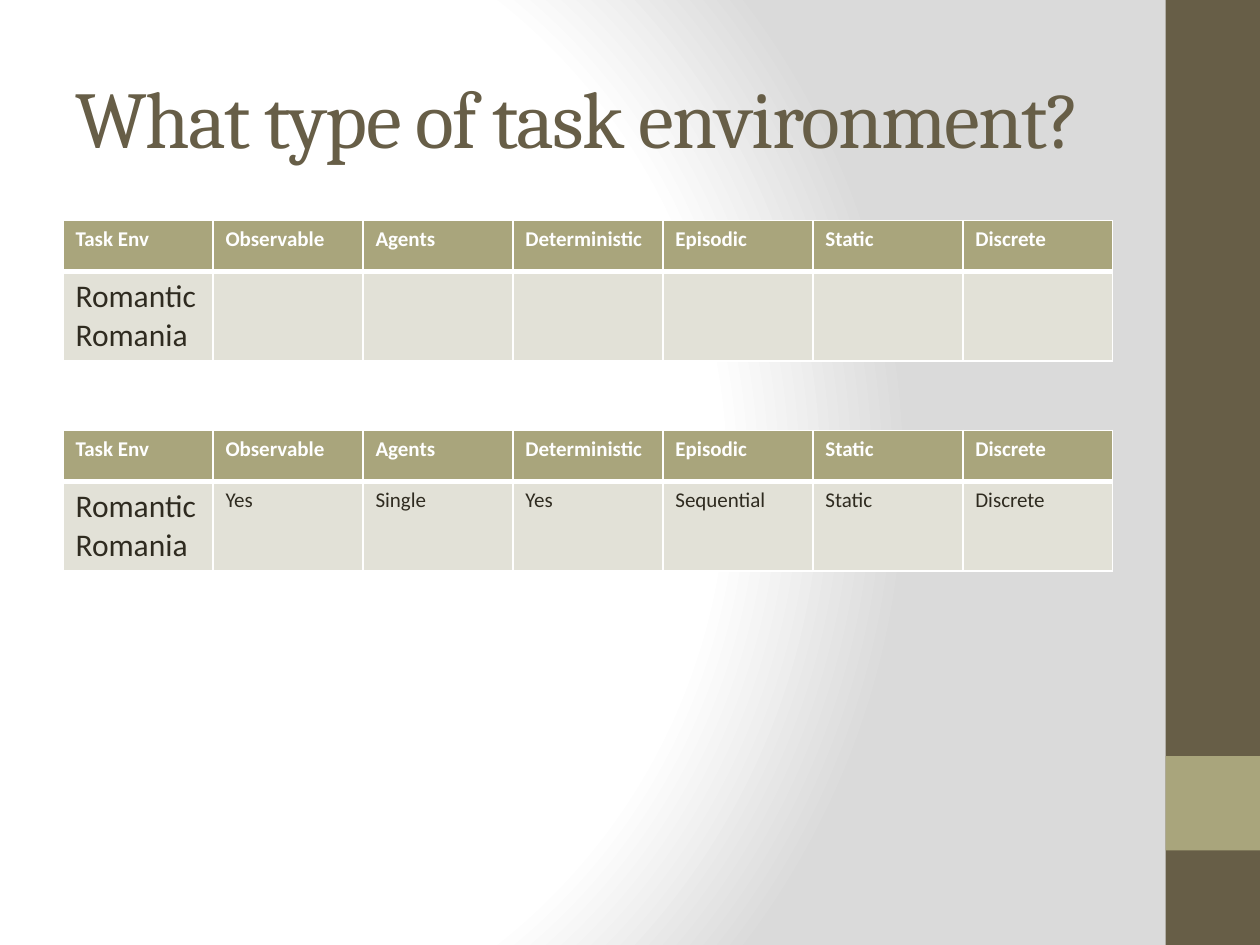
from pptx import Presentation
from pptx import util as u
from pptx.dml.color import RGBColor
from pptx.enum import shapes, text
from pptx.oxml import parse_xml
from pptx.oxml.ns import nsdecls

HEADINGS = ["Task Env", "Observable", "Agents", "Deterministic", "Episodic", "Static", "Discrete"]
TASK = "Romantic Romania"
ANSWERS = ["Yes", "Single", "Yes", "Sequential", "Static", "Discrete"]


def color(value):
    return RGBColor.from_string(value)


class SlideBuilder:
    """Hold the style and the current slide, and add each kind of element."""

    BROWN, OLIVE, PALE, INK, WHITE = "675E47", "A9A57C", "E2E1D7", "2F2B20", "FFFFFF"
    HEADING_FONT, BODY_FONT = "Cambria", "Calibri"

    def __init__(self, deck):
        self.page = deck.slides.add_slide(deck.slide_layouts[5])

    def background(self, stops):
        marks = "".join(
            f'<a:gs pos="{percent * 1000}"><a:srgbClr val="{value}"/></a:gs>'
            for percent, value in stops
        )
        self.page._element.cSld.insert(0, parse_xml(
            f'<p:bg {nsdecls("p", "a")}><p:bgPr><a:gradFill rotWithShape="1">'
            f'<a:gsLst>{marks}</a:gsLst><a:path path="circle">'
            '<a:fillToRect l="20000" t="50000" r="100000" b="50000"/></a:path>'
            '</a:gradFill><a:effectLst/></p:bgPr></p:bg>'
        ))

    def format(self, para, size, font, value, bold=False):
        para.font.size = u.Pt(size)
        para.font.name = font
        para.font.bold = bold
        para.font.color.rgb = color(value)

    def bar(self, left, top, width, height, fill):
        box = self.page.shapes.add_shape(
            shapes.MSO_SHAPE.RECTANGLE, *map(u.Pt, (left, top, width, height))
        )
        box.shadow.inherit = False
        box.fill.solid()
        box.fill.fore_color.rgb = color(fill)
        box.line.fill.background()

    def title(self, words, left, top, width, height):
        box = self.page.shapes.title
        box.left, box.top, box.width, box.height = map(u.Pt, (left, top, width, height))
        frame = box.text_frame
        frame.text = words
        frame.word_wrap = True
        frame.auto_size = text.MSO_AUTO_SIZE.NONE
        frame.vertical_anchor = text.MSO_ANCHOR.MIDDLE
        para = frame.paragraphs[0]
        para.alignment = text.PP_ALIGN.LEFT
        self.format(para, 46, self.HEADING_FONT, self.BROWN)
        para.runs[0].font._element.set("spc", "-100")

    def borders(self, cell, **widths):
        properties = cell._tc.get_or_add_tcPr()
        for index, side in enumerate("LRTB"):
            width = u.Pt(widths.get(side, 1))
            properties.insert(index, parse_xml(
                f'<a:ln{side} {nsdecls("a")} w="{width}"><a:solidFill>'
                f'<a:srgbClr val="{self.WHITE}"/></a:solidFill></a:ln{side}>'
            ))

    def table(self, rows, left, top, width, height, row_height):
        frame = self.page.shapes.add_table(
            len(rows), len(rows[0]), *map(u.Pt, (left, top, width, height))
        )
        for row, words in zip(frame.table.rows, rows):
            row.height = u.Pt(row_height)
            header = words is rows[0]
            for index, (cell, word) in enumerate(zip(row.cells, words)):
                cell.text = word
                cell.fill.solid()
                cell.fill.fore_color.rgb = color(self.OLIVE if header else self.PALE)
                size = 18 if index == 0 and not header else 12
                ink = self.WHITE if header else self.INK
                self.format(cell.text_frame.paragraphs[0], size, self.BODY_FONT, ink, header)
                self.borders(cell, **({"B": 3} if header else {"T": 3}))
        frame.height = u.Pt(height)


def main():
    deck = Presentation()
    deck.slide_width, deck.slide_height = u.Pt(720), u.Pt(540)
    slide = SlideBuilder(deck)
    slide.background([(0, "FFFFFF"), (75, "FFFFFF"), (100, "DADADA")])
    slide.bar(666, 0, 54, 540, slide.BROWN)
    slide.bar(666, 432, 54, 54, slide.OLIVE)
    slide.title("What type of task environment?", 36, 21.6, 624, 90)
    for top, answers in ((126, [""] * len(ANSWERS)), (246, ANSWERS)):
        slide.table([HEADINGS, [TASK, *answers]], 36, top, 600, 80, 29.2)
    deck.save("out.pptx")


if __name__ == "__main__":
    main()
